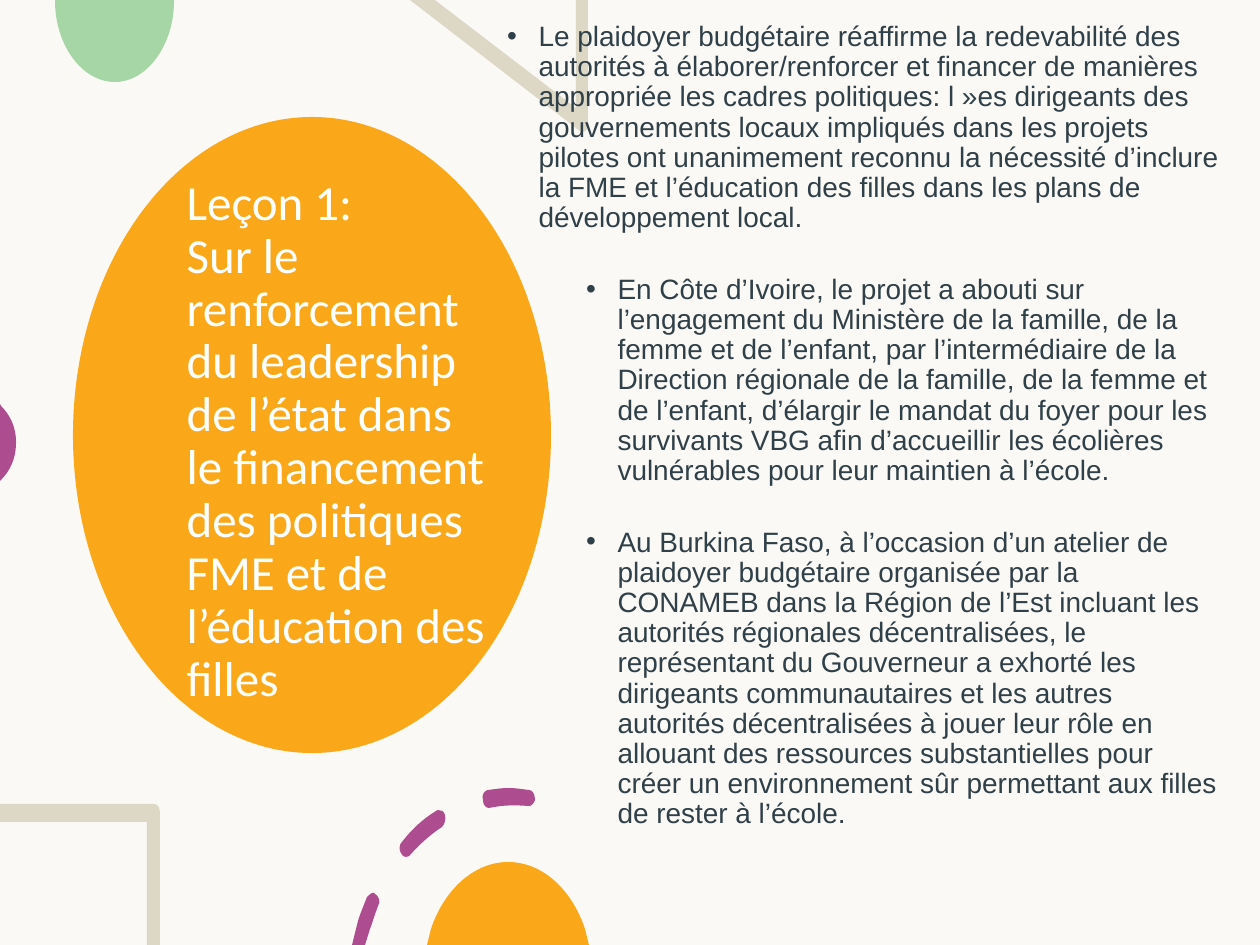
from lxml import etree
from pptx import Presentation
from pptx.dml.color import RGBColor
from pptx.enum.shapes import MSO_SHAPE
from pptx.enum.text import MSO_ANCHOR, MSO_AUTO_SIZE, PP_ALIGN
from pptx.oxml.ns import qn
from pptx.util import Inches, Pt

OVAL = MSO_SHAPE.OVAL
TOP, MIDDLE = MSO_ANCHOR.TOP, MSO_ANCHOR.MIDDLE
NO_FIT = MSO_AUTO_SIZE.NONE
LEFT = PP_ALIGN.LEFT
PX = Inches(1) / 126

COLORS = {"paper": "FAF9F5", "orange": "FAA819", "green": "A7D6A6",
          "sand": "DDD8C6", "purple": "AE4C90", "ink": "304048",
          "white": "FFFFFF"}

# Content
LESSON = ("Leçon 1:\vSur le renforcement du leadership de l’état dans le "
          "financement des politiques FME et de l’éducation des filles")

# (level, left margin in px, space before in pt, text)
POINTS = [
    (0, 47, 0,
     "Le plaidoyer budgétaire réaffirme la redevabilité des autorités à "
     "élaborer/renforcer et financer de manières appropriée les cadres "
     "politiques: l »es dirigeants des gouvernements locaux impliqués dans "
     "les projets pilotes ont unanimement reconnu la nécessité d’inclure la "
     "FME et l’éducation des filles dans les plans de développement local."),
    (1, 126, 23.6,
     "En Côte d’Ivoire, le projet a abouti sur l’engagement du Ministère de "
     "la famille, de la femme et de l’enfant, par l’intermédiaire de la "
     "Direction régionale de la famille, de la femme et de l’enfant, "
     "d’élargir le mandat du foyer pour les survivants VBG afin d’accueillir "
     "les écolières vulnérables pour leur maintien à l’école."),
    (1, 126, 23.6,
     "Au Burkina Faso, à l’occasion d’un atelier de plaidoyer budgétaire "
     "organisée par la CONAMEB dans la Région de l’Est incluant les autorités "
     "régionales décentralisées, le représentant du Gouverneur a exhorté les "
     "dirigeants communautaires et les autres autorités décentralisées à "
     "jouer leur rôle en allouant des ressources substantielles pour créer "
     "un environnement sûr permettant aux filles de rester à l’école."),
]

# Boxes in px: left, top, width, height
LESSON_OVAL = (73, 117, 478, 636)
LESSON_BOX = (174, 162, 335, 561)
POINTS_BOX = (479, 16, 757, 873)

# Outlines in px: a pair is a corner, six numbers are a cubic curve
DECORATIONS = [
    ("green", [[(174, 0), (55, 0), (55, 1), (55, 45, 82, 82, 115, 82),
                (147, 82, 174, 45, 174, 1)]]),
    ("sand", [[(588, 0), (576, 0), (576, 108), (435, 0), (410, 0), (580, 131),
               (581, 132, 581, 132, 582, 132),
               (586, 132, 588, 129, 588, 123)]]),
    ("purple", [[(0, 404), (0, 481), (1, 480), (10, 471, 16, 459, 16, 442),
                 (16, 427, 10, 415, 1, 406)]]),
    ("sand", [[(154, 804), (0, 804), (0, 822), (147, 822), (147, 945),
               (160, 945), (160, 813), (160, 808, 158, 804, 154, 804)]]),
    ("purple", [
        [(374, 893), (372, 892, 369, 895, 367, 897),
         (364, 905, 360, 914, 358, 921), (352, 945), (365, 945), (370, 929),
         (373, 921, 375, 914, 378, 906), (381, 902, 379, 896, 375, 894),
         (375, 893, 374, 893, 374, 893)],
        [(438, 810), (437, 810, 437, 810, 436, 811),
         (423, 819, 412, 829, 402, 842), (399, 844, 399, 851, 401, 853),
         (402, 856, 404, 857, 406, 857), (408, 857, 410, 856, 411, 854),
         (420, 844, 431, 834, 442, 827), (445, 824, 446, 819, 445, 815),
         (444, 811, 441, 810, 438, 810)],
        [(509, 788), (501, 788, 496, 789, 488, 790),
         (485, 790, 481, 795, 483, 800), (483, 804, 485, 808, 489, 808),
         (503, 805, 515, 805, 528, 806), (530, 807, 534, 804, 535, 800),
         (535, 795, 533, 790, 529, 790), (521, 789, 515, 788, 509, 788)]]),
    ("orange", [[(508, 862), (474, 862, 444, 890, 431, 929), (427, 945),
                 (589, 945), (585, 929), (572, 890, 543, 862, 508, 862)]]),
]


def px(value):
    return round(value * PX)


def color(name):
    return RGBColor.from_string(COLORS[name])


def paint(shape, name):
    shape.fill.solid()
    shape.fill.fore_color.rgb = color(name)
    shape.line.fill.background()
    shape.shadow.inherit = False


def add_decoration(shapes, name, outlines):
    """Draw the corners and curve ends, then bend the curved segments."""
    builder = shapes.build_freeform(*map(px, outlines[0][0]), scale=1.0)
    for number, (start, *steps) in enumerate(outlines):
        if number:
            builder.move_to(*map(px, start))
        builder.add_line_segments([tuple(map(px, step[-2:])) for step in steps],
                                  close=True)
    shape = builder.convert_to_shape()
    paint(shape, name)

    all_steps = [step for outline in outlines for step in outline[1:]]
    segments = list(shape._element.iter(qn("a:lnTo")))
    for segment, step in zip(segments, all_steps):
        if len(step) == 6:
            bend(segment, step, shape.left, shape.top)


def bend(segment, curve, left, top):
    segment.tag = qn("a:cubicBezTo")
    for index, (x, y) in enumerate((curve[:2], curve[2:4])):
        control = etree.Element(qn("a:pt"), x=str(px(x) - left),
                                y=str(px(y) - top))
        segment.insert(index, control)


def place(holder, box, anchor):
    holder.left, holder.top, holder.width, holder.height = map(px, box)
    frame = holder.text_frame
    frame.word_wrap = True
    frame.auto_size = NO_FIT
    frame.vertical_anchor = anchor
    return frame


def style(paragraph, font, size, name):
    paragraph.alignment = LEFT
    paragraph.line_spacing = 0.9
    for run in paragraph.runs:
        run.font.name = font
        run.font.size = Pt(size)
        run.font.color.rgb = color(name)


def add_bullet(paragraph, margin):
    props = paragraph._p.get_or_add_pPr()
    props.set("marL", str(px(margin)))
    props.set("indent", str(-Inches(0.25)))
    etree.SubElement(props, qn("a:buFont")).set("typeface", "Arial")
    etree.SubElement(props, qn("a:buChar")).set("char", "•")


def main():
    deck = Presentation()
    deck.slide_width, deck.slide_height = Inches(10), Inches(7.5)
    slide = deck.slides.add_slide(deck.slide_layouts[1])
    shapes = slide.shapes
    slide.background.fill.solid()
    slide.background.fill.fore_color.rgb = color("paper")

    # Oval and decorations
    paint(shapes.add_shape(OVAL, *map(px, LESSON_OVAL)), "orange")
    for name, outlines in DECORATIONS:
        add_decoration(shapes, name, outlines)

    # Lesson title and points, in front of the decorations
    lesson, points = shapes.title, slide.placeholders[1]
    for holder in (lesson, points):
        shapes._spTree.append(holder._element)

    frame = place(lesson, LESSON_BOX, MIDDLE)
    frame.text = LESSON
    style(frame.paragraphs[0], "Calibri", 28, "white")

    frame = place(points, POINTS_BOX, TOP)
    frame.text = "\n".join(text for *_, text in POINTS)
    for paragraph, (level, margin, gap, _) in zip(frame.paragraphs, POINTS):
        paragraph.level = level
        paragraph.space_before = Pt(gap)
        style(paragraph, "Arial", 16, "ink")
        add_bullet(paragraph, margin)

    deck.save("out.pptx")


if __name__ == "__main__":
    main()
